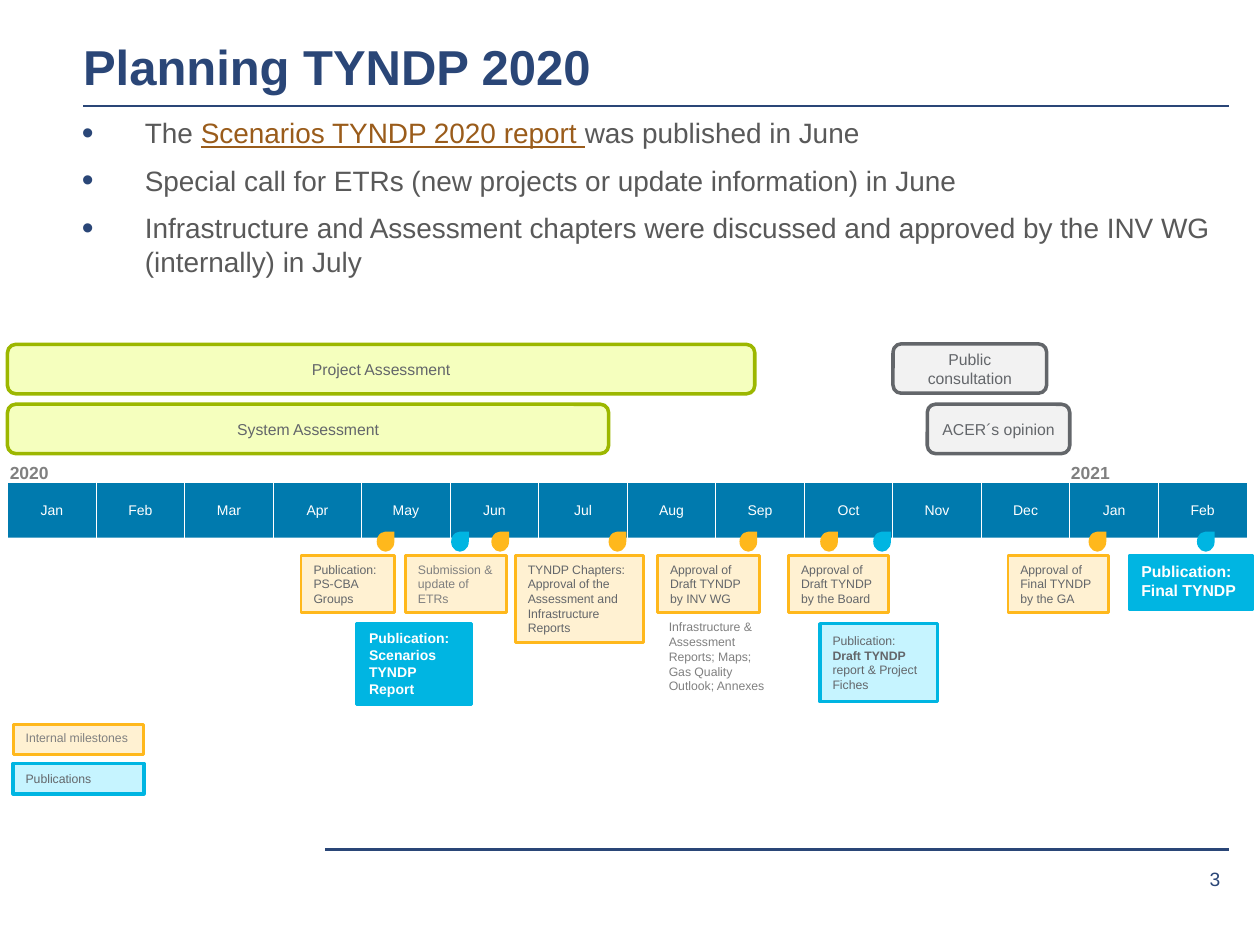
from lxml import etree
from pptx import Presentation
from pptx.dml.color import RGBColor
from pptx.enum.shapes import MSO_CONNECTOR, MSO_SHAPE
from pptx.enum.text import MSO_ANCHOR, PP_ALIGN
from pptx.oxml.ns import qn
from pptx.util import Pt

LEFT, CENTER, RIGHT = PP_ALIGN.LEFT, PP_ALIGN.CENTER, PP_ALIGN.RIGHT
TOP, MIDDLE, BOTTOM = MSO_ANCHOR.TOP, MSO_ANCHOR.MIDDLE, MSO_ANCHOR.BOTTOM
RECT, ROUND, DROP = MSO_SHAPE.RECTANGLE, MSO_SHAPE.ROUNDED_RECTANGLE, MSO_SHAPE.TEAR
STRAIGHT = MSO_CONNECTOR.STRAIGHT

NAVY, BLUE, WHITE = "2A4677", "007AAE", "FFFFFF"
AMBER, CYAN = "FFB81C", "00B5E2"
SLATE, GREY, BODY_GREY, LINK = "63666A", "808080", "595959", "9A5C1B"

# fill, line, line width
INTERNAL = ("FFF1D2", AMBER, 1.5)
PUBLICATION = ("C6F4FF", CYAN, 2)
HIGHLIGHT = (CYAN, CYAN, 1.5)
ASSESSMENT = ("F5FFBE", "9CB700", 2)
REVIEW = ("F2F2F2", SLATE, 2)
MONTH = (BLUE, WHITE, 0.25)

MONTHS = "Jan Feb Mar Apr May Jun Jul Aug Sep Oct Nov Dec Jan Feb".split()
MONTH_LEFT, MONTH_TOP, MONTH_STEP = 4.3, 275.8, 50.58
CARD_TOP, CARD_HEIGHT = 317.5, 32.4


def rgb(hex_color):
    return RGBColor.from_string(hex_color)


def set_font(font, size, color, **styles):
    for name, value in {"name": "Arial", "size": Pt(size), **styles}.items():
        setattr(font, name, value)
    font.color.rgb = rgb(color)


def write(frame, paragraphs, size, color, bold=False, align=LEFT,
          anchor=TOP, margins=(7.2, 3.6)):
    """Each paragraph is a string or a list of (text, style changes)."""
    side, edge = (Pt(margin) for margin in margins)
    layout = {"word_wrap": True, "vertical_anchor": anchor,
              "margin_left": side, "margin_right": side,
              "margin_top": edge, "margin_bottom": edge}
    for name, value in layout.items():
        setattr(frame, name, value)
    for index, content in enumerate(paragraphs):
        paragraph = frame.add_paragraph() if index else frame.paragraphs[0]
        paragraph.alignment = align
        runs = [(content, {})] if isinstance(content, str) else content
        for text, changes in runs:
            run = paragraph.add_run()
            run.text = text
            set_font(run.font, **{"size": size, "color": color,
                                  "bold": bold, **changes})


def add_label(slide, box, paragraphs, size, color, **options):
    label = slide.shapes.add_textbox(*map(Pt, box))
    write(label.text_frame, paragraphs, size, color, **options)
    return label.text_frame


def add_box(slide, kind, box, style, paragraphs, size, color,
            corner=None, **options):
    fill, line, width = style
    shape = slide.shapes.add_shape(kind, *map(Pt, box))
    shape.shadow.inherit = False
    shape.fill.solid()
    shape.fill.fore_color.rgb = rgb(fill)
    shape.line.color.rgb = rgb(line)
    shape.line.width = Pt(width)
    if corner is not None:
        shape.adjustments[0] = corner
    write(shape.text_frame, paragraphs, size, color, **options)


def add_card(slide, box, style, paragraphs, size=7, color=SLATE, **options):
    add_box(slide, ROUND, box, style, paragraphs, size, color,
            corner=0, **options)


def add_drop(slide, left, color):
    drop = slide.shapes.add_shape(DROP, Pt(left), Pt(303.8), Pt(10.1), Pt(11.5))
    drop.shadow.inherit = False
    drop.fill.solid()
    drop.fill.fore_color.rgb = rgb(color)
    drop.line.fill.background()


def add_rule(slide, left, right, y):
    rule = slide.shapes.add_connector(STRAIGHT, Pt(left), Pt(y), Pt(right), Pt(y))
    rule.line.color.rgb = rgb(NAVY)
    rule.line.width = Pt(1.5)
    etree.SubElement(rule._element.spPr, qn("a:effectLst"))


def add_bullet(paragraph):
    properties = paragraph._p.get_or_add_pPr()
    properties.set("marL", str(Pt(36)))
    properties.set("indent", str(Pt(-36)))
    color = etree.SubElement(properties, qn("a:buClr"))
    etree.SubElement(color, qn("a:srgbClr"), val=NAVY)
    etree.SubElement(properties, qn("a:buSzPct"), val="120000")
    etree.SubElement(properties, qn("a:buFont"), typeface="Arial")
    etree.SubElement(properties, qn("a:buChar"), char="•")


def add_heading(slide):
    add_rule(slide, 47.5, 702, 60.5)
    add_label(slide, (47.5, 25.9, 656, 28.8), ["Planning TYNDP 2020"], 28, NAVY,
              bold=True, anchor=BOTTOM, margins=(0, 0))
    points = [
        [("The ", {}),
         ("Scenarios TYNDP 2020 report ", {"color": LINK, "underline": True}),
         ("was published in June", {})],
        "Special call for ETRs (new projects or update information) in June",
        "Infrastructure and Assessment chapters were discussed and approved "
        "by the INV WG (internally) in July",
    ]
    body = add_label(slide, (46.8, 66.2, 656, 375.8), points, 16, BODY_GREY,
                     margins=(0, 0))
    for index, paragraph in enumerate(body.paragraphs):
        if index:
            paragraph.space_before = Pt(8)
        add_bullet(paragraph)


def add_phases(slide):
    phases = [
        ("Project Assessment", 4.3, 196.8, 427, ASSESSMENT),
        ("System Assessment", 4.3, 231, 343.5, ASSESSMENT),
        ("Public consultation", 510.3, 196.5, 87.8, REVIEW),
        ("ACER´s opinion", 529.9, 231, 81.4, REVIEW),
    ]
    for name, left, top, width, style in phases:
        add_box(slide, ROUND, (left, top, width, 28.2), style, [name], 9, SLATE,
                align=CENTER, anchor=MIDDLE, margins=(6, 3.6))


def add_calendar(slide):
    for index, month in enumerate(MONTHS):
        box = (MONTH_LEFT + index * MONTH_STEP, MONTH_TOP, 50.8, 31.5)
        add_box(slide, RECT, box, MONTH, [month], 8, WHITE,
                align=CENTER, anchor=MIDDLE)
    for year, left in (("2020", 5.6), ("2021", 612)):
        add_label(slide, (left, 263.8, 50.4, 12.2), [year], 10, GREY,
                  bold=True, anchor=MIDDLE, margins=(0, 0))


def add_milestones(slide):
    # Internal milestones below the calendar
    add_box(slide, RECT, (172.1, CARD_TOP, 53.3, CARD_HEIGHT), INTERNAL,
            ["Publication: PS-CBA Groups"], 7, SLATE)
    internal = [
        ("Submission & update of ETRs", 231.8, 57.6, CARD_HEIGHT, GREY),
        ("TYNDP Chapters: Approval of the Assessment and Infrastructure Reports",
         294.5, 73.4, 49.7, SLATE),
        ("Approval of Draft TYNDP by INV WG", 375.8, 58.3, CARD_HEIGHT, SLATE),
        ("Approval of Draft TYNDP by the Board", 450.7, 56.9, CARD_HEIGHT, SLATE),
        ("Approval of Final TYNDP by the GA", 576, 57.6, CARD_HEIGHT, SLATE),
    ]
    for text, left, width, height, color in internal:
        add_card(slide, (left, CARD_TOP, width, height), INTERNAL, [text],
                 color=color)
    add_label(slide, (375.1, 350.6, 74.9, 49.7),
              ["Infrastructure & Assessment Reports; Maps; Gas Quality "
               "Outlook; Annexes"], 7, GREY)

    # Publications
    add_card(slide, (203.8, 356.4, 65.5, 46.1), HIGHLIGHT,
             ["Publication: Scenarios", "TYNDP Report"], 8, WHITE, bold=True)
    draft = [("Publication: ", {}), ("Draft TYNDP ", {"bold": True}),
             ("report & Project Fiches", {})]
    add_card(slide, (468.7, 356.4, 67, 44.6), PUBLICATION, [draft], anchor=MIDDLE)
    add_box(slide, RECT, (645.1, CARD_TOP, 70.9, 31), HIGHLIGHT,
            ["Publication:", "Final TYNDP"], 9, WHITE, bold=True)

    # Date markers
    markers = {AMBER: (215.3, 280.8, 347.8, 422.6, 468.7, 622.1),
               CYAN: (257.8, 499, 684)}
    for color, lefts in markers.items():
        for left in lefts:
            add_drop(slide, left, color)


def add_legend(slide):
    add_card(slide, (7.6, 414, 74.6, 17.3), INTERNAL, ["Internal milestones"],
             color=GREY)
    add_card(slide, (7.6, 436.3, 74.6, 17.3), PUBLICATION, ["Publications"],
             anchor=MIDDLE)


def add_footer(slide):
    add_rule(slide, 185.8, 702, 485.3)
    add_label(slide, (643.7, 491, 53.6, 22.3), ["3"], 11, NAVY,
              align=RIGHT, anchor=MIDDLE, margins=(0, 0))


def main():
    presentation = Presentation()
    presentation.slide_width, presentation.slide_height = Pt(720), Pt(540)
    slide = presentation.slides.add_slide(presentation.slide_layouts[6])
    add_heading(slide)
    add_phases(slide)
    add_calendar(slide)
    add_milestones(slide)
    add_legend(slide)
    add_footer(slide)
    presentation.save("out.pptx")


if __name__ == "__main__":
    main()
